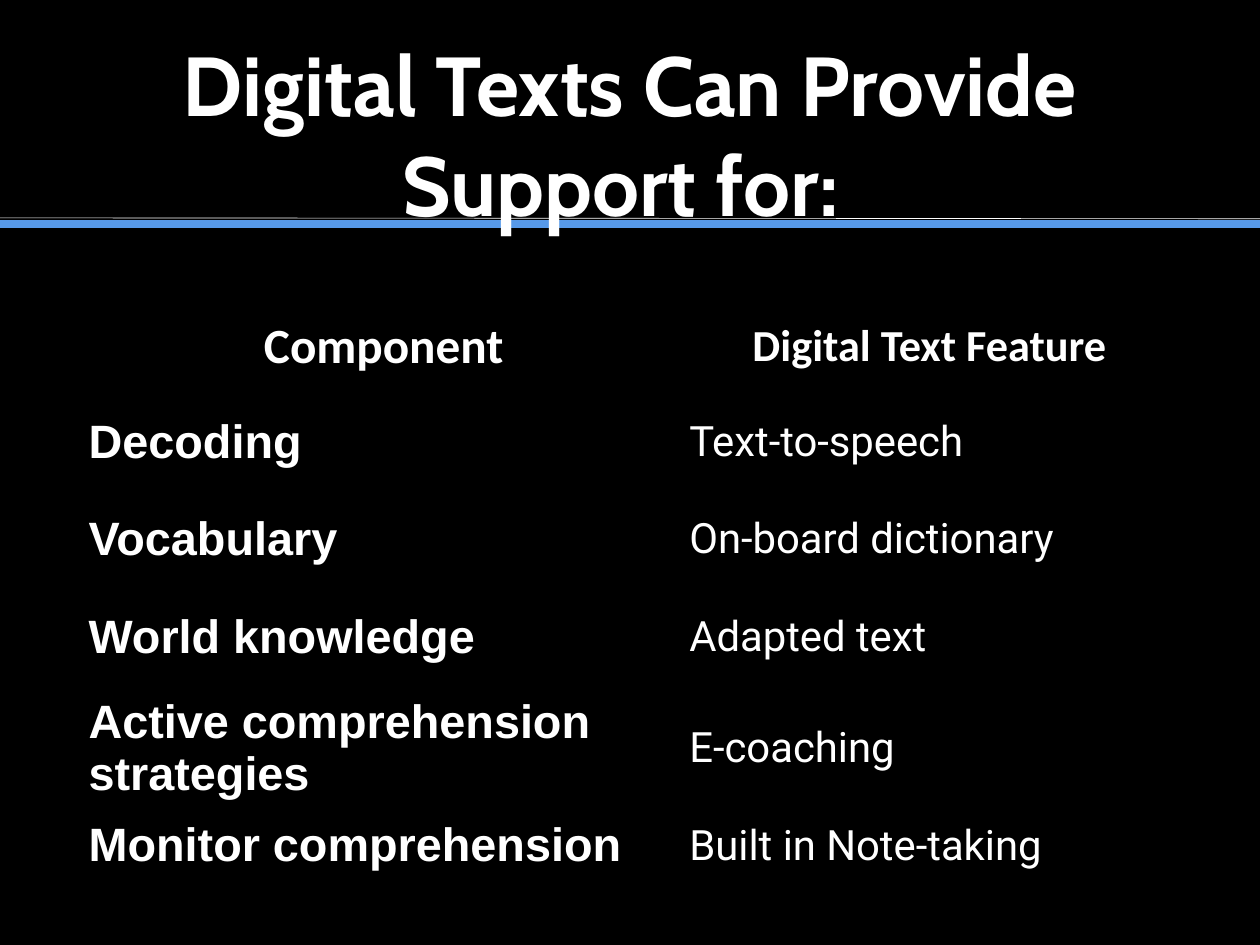
"""Builds the slide on how digital texts support reading components."""
from lxml import etree
from pptx import Presentation
from pptx.dml.color import RGBColor
from pptx.enum.shapes import MSO_CONNECTOR
from pptx.enum.text import MSO_ANCHOR, MSO_AUTO_SIZE, PP_ALIGN
from pptx.oxml import parse_xml
from pptx.oxml.ns import qn
from pptx.util import Inches, Pt

STRAIGHT = MSO_CONNECTOR.STRAIGHT
MIDDLE = MSO_ANCHOR.MIDDLE
NO_AUTOFIT = MSO_AUTO_SIZE.NONE
CENTER, LEFT = PP_ALIGN.CENTER, PP_ALIGN.LEFT

COLORS = {"black": "000000", "white": "FFFFFF", "blue": "5799E8"}
DRAWING_NS = "http://schemas.openxmlformats.org/drawingml/2006/main"
SLIDE_WIDTH, SLIDE_HEIGHT = 14.22, 10.67


def write(frame, text, font, size, bold=True, align=LEFT):
    paragraph = frame.paragraphs[0]
    paragraph.alignment = align
    run = paragraph.add_run()
    run.text = text
    run.font.name = font
    run.font.size = Pt(size)
    run.font.bold = bold
    run.font.color.rgb = RGBColor.from_string(COLORS["white"])


def add_borders(cell, color, width):
    properties = cell._tc.get_or_add_tcPr()
    for side in ("lnL", "lnR", "lnT", "lnB"):
        properties.append(parse_xml(
            f'<a:{side} xmlns:a="{DRAWING_NS}" w="{Pt(width)}"><a:solidFill>'
            f'<a:srgbClr val="{color}"/></a:solidFill></a:{side}>'))


presentation = Presentation()
presentation.slide_width = Inches(SLIDE_WIDTH)
presentation.slide_height = Inches(SLIDE_HEIGHT)
slide = presentation.slides.add_slide(presentation.slide_layouts[5])
slide.background.fill.solid()
slide.background.fill.fore_color.rgb = RGBColor.from_string(COLORS["black"])

for start_y, end_y, color, width in ((2.53, 2.53, "blue", 7), (2.46, 2.47, "white", 0.5)):
    rule = slide.shapes.add_connector(
        STRAIGHT, 0, Inches(start_y), Inches(SLIDE_WIDTH), Inches(end_y))
    rule.line.color.rgb = RGBColor.from_string(COLORS[color])
    rule.line.width = Pt(width)
    etree.SubElement(rule._element.spPr, qn("a:effectLst"))

title = slide.shapes.title
slide.shapes._spTree.append(title._element)
title.left, title.top = Inches(1.39), Inches(0)
title.width, title.height = Inches(11.44), Inches(3.01)
heading = title.text_frame
heading.word_wrap = True
heading.auto_size = NO_AUTOFIT
heading.vertical_anchor = MIDDLE
heading.margin_left = heading.margin_right = Inches(0.14)
heading.margin_top = heading.margin_bottom = Inches(0.07)
write(heading, "Digital Texts Can Provide Support for: ", "Cabin", 68, align=CENTER)

supports = [
    ("Component", "Digital Text Feature", 1.06),
    ("Decoding", "Text‐to‐speech", 1.1),
    ("Vocabulary", "On‐board dictionary", 1.1),
    ("World knowledge", "Adapted text", 1.1),
    ("Active comprehension strategies", "E‐coaching", 1.42),
    ("Monitor comprehension", "Built in Note-taking", 0.78),
]
header_formats = [
    {"font": "Calibri", "size": 40, "align": CENTER},
    {"font": "Calibri", "size": 36, "align": CENTER},
]
body_formats = [
    {"font": "Arial", "size": 38},
    {"font": "Roboto", "size": 34, "bold": False},
]
support_table = slide.shapes.add_table(
    len(supports), 2, Inches(0.94), Inches(3.38), Inches(12.32), Inches(6.57)).table
support_table.horz_banding = False
for column, width in zip(support_table.columns, (6.78, 5.54)):
    column.width = Inches(width)

for row_index, (component, feature, height) in enumerate(supports):
    support_table.rows[row_index].height = Inches(height)
    formats = body_formats if row_index else header_formats
    for column_index, text in enumerate((component, feature)):
        cell = support_table.cell(row_index, column_index)
        cell.margin_left = cell.margin_right = Inches(0.06)
        cell.margin_top = cell.margin_bottom = Inches(0.06)
        cell.vertical_anchor = MIDDLE
        add_borders(cell, COLORS["black"], 2)
        cell.fill.background()
        write(cell.text_frame, text, **formats[column_index])

presentation.save("out.pptx")
